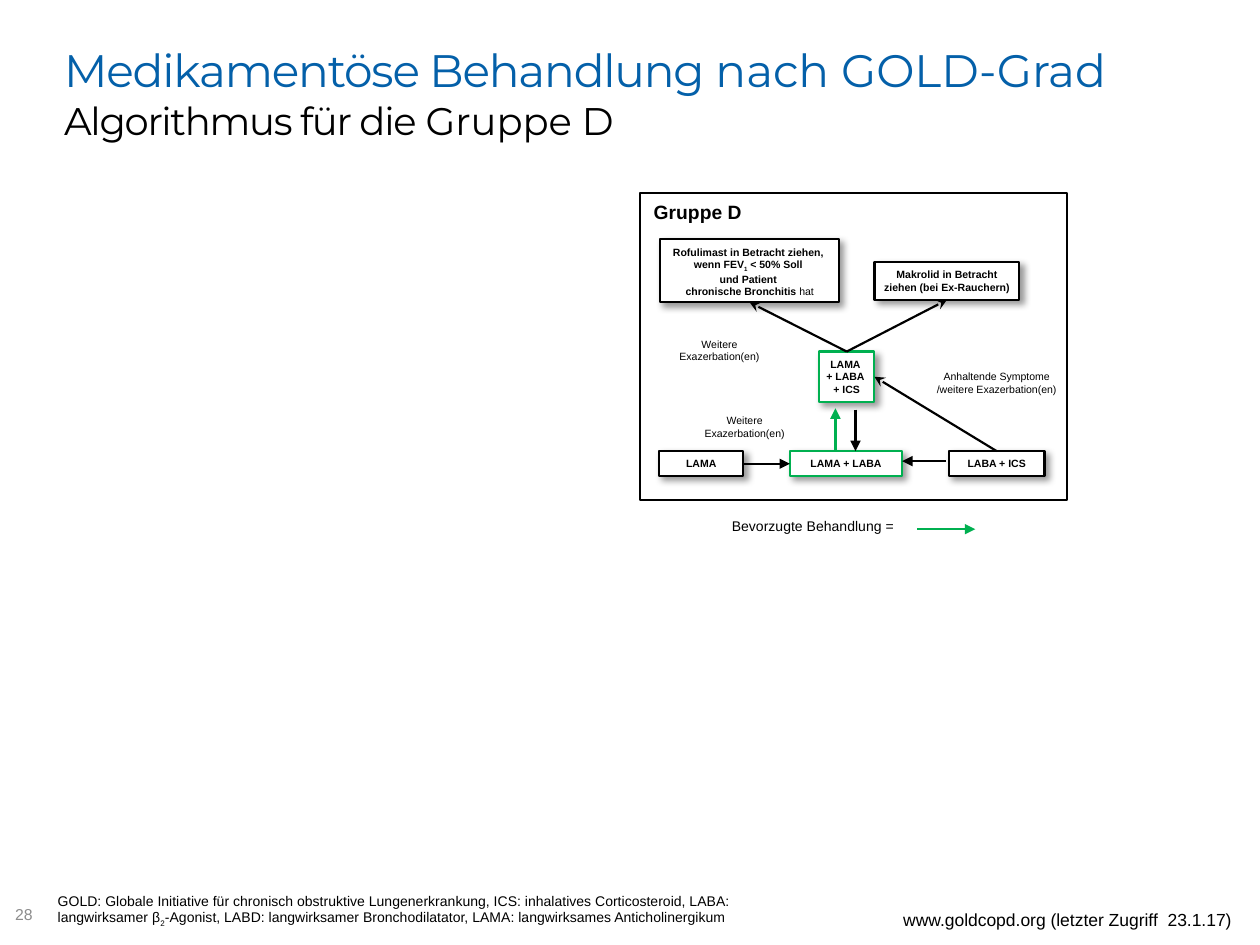
"""Build the slide on the GOLD group D treatment algorithm."""
import pptx
import pptx.dml.color
import pptx.enum.shapes
import pptx.enum.text
import pptx.oxml
import pptx.oxml.ns
import pptx.util

Pt = pptx.util.Pt
RGBColor = pptx.dml.color.RGBColor
ALIGN = pptx.enum.text.PP_ALIGN
ANCHOR = pptx.enum.text.MSO_ANCHOR
AUTO = pptx.enum.text.MSO_AUTO_SIZE
RECT = pptx.enum.shapes.MSO_SHAPE.RECTANGLE
STRAIGHT = pptx.enum.shapes.MSO_CONNECTOR.STRAIGHT

BLACK = RGBColor(0x00, 0x00, 0x00)
WHITE = RGBColor(0xFF, 0xFF, 0xFF)
GREEN = RGBColor(0x00, 0xB0, 0x50)
BLUE = RGBColor(0x04, 0x60, 0xA9)
GRAY = RGBColor(0x8C, 0x8C, 0x8C)
NS = pptx.oxml.ns.nsdecls("a")
SHADOW = (
    f'<a:outerShdw {NS} blurRad="50800" dist="38100" dir="2700000" algn="tl" rotWithShape="0">'
    '<a:srgbClr val="000000"><a:alpha val="40000"/></a:srgbClr></a:outerShdw>'
)


def write(s, pieces, size, align=ALIGN.LEFT, bold=False, color=BLACK, side=7.2):
    tf = s.text_frame
    tf.word_wrap = True
    tf.auto_size = AUTO.SHAPE_TO_FIT_TEXT
    tf.vertical_anchor = ANCHOR.TOP
    tf.margin_left = tf.margin_right = Pt(side)
    tf.margin_top = tf.margin_bottom = Pt(3.6)
    tf.text = pieces[0]
    for piece in pieces[1:]:
        if piece == "\v":
            tf.paragraphs[0].add_line_break()
        else:
            tf.paragraphs[0].add_run().text = piece
    for p in tf.paragraphs:
        p.alignment = align
        for r in p.runs:
            r.font.name = "Arial"
            r.font.size = Pt(size)
            r.font.bold = bold
            r.font.color.rgb = color
    return tf


def arrow(x1, y1, x2, y2, color=BLACK, width=1.25, head="triangle"):
    s = slide.shapes.add_connector(STRAIGHT, Pt(x1), Pt(y1), Pt(x2), Pt(y2))
    s.line.color.rgb = color
    s.line.width = Pt(width)
    s.line._get_or_add_ln().append(pptx.oxml.parse_xml(f'<a:tailEnd {NS} type="{head}"/>'))
    s._element.spPr.append(pptx.oxml.parse_xml(f"<a:effectLst {NS}/>"))
    return s


prs = pptx.Presentation()
prs.slide_width, prs.slide_height = Pt(720), Pt(540)
slide = prs.slides.add_slide(prs.slide_layouts[6])

frame = slide.shapes.add_shape(RECT, Pt(365.8), Pt(110.2), Pt(244.1), Pt(175.7))
frame.shadow.inherit = False
frame.fill.background()
frame.line.color.rgb = BLACK
frame.line.width = Pt(1.25)

texts = {}
for name, x, y, w, h, pieces, size, align, bold, color, side in [
    ("footnote", 25.9, 506.2, 427, 26.6, [
        "GOLD: Globale Initiative für chronisch obstruktive Lungenerkrankung, ICS: inhalatives "
        "Corticosteroid, LABA: langwirksamer β", "2",
        "-Agonist, LABD: langwirksamer Bronchodilatator, LAMA: langwirksames Anticholinergikum",
    ], 8, ALIGN.LEFT, False, BLACK, 7.2),
    ("group", 366.5, 110.9, 69.1, 20.9, ["Gruppe D"], 11, ALIGN.LEFT, True, BLACK, 7.2),
    ("lower", 388.1, 233.3, 74.9, 21.6, ["Weitere Exazerbation(en)"], 6, ALIGN.CENTER, False, BLACK, 7.2),
    ("upper", 377.3, 189.4, 67.7, 21.6, ["Weitere Exazerbation(en)"], 6, ALIGN.CENTER, False, BLACK, 7.2),
    ("lasting", 524.2, 208.1, 90.7, 21.6, ["Anhaltende Symptome\n/weitere Exazerbation(en)"],
     6, ALIGN.CENTER, False, BLACK, 7.2),
    ("legend", 411.1, 292.3, 158.4, 26.6, ["Bevorzugte Behandlung ="], 8, ALIGN.LEFT, False, BLACK, 7.2),
    ("number", 0, 508.3, 22.3, 28.8, ["28"], 9, ALIGN.LEFT, False, GRAY, 8.6),
    ("source", 499.7, 514.8, 211, 20.9, ["www.goldcopd.org (letzter Zugriff  23.1.17)"],
     10, ALIGN.RIGHT, False, BLACK, 7.2),
    ("title", 36.7, 15.1, 657.4, 75.6, [
        "Medikamentöse Behandlung ", "nach GOLD-Grad ", "\v", "Algorithmus für die ", "Gruppe D",
    ], 26, ALIGN.LEFT, False, BLUE, 0),
]:
    s = slide.shapes.add_textbox(Pt(x), Pt(y), Pt(w), Pt(h))
    texts[name] = write(s, pieces, size, align, bold, color, side)

texts["footnote"].paragraphs[0].runs[1]._r.get_or_add_rPr().set("baseline", "-25000")
texts["source"].paragraphs[0].line_spacing = 1.1
texts["number"].margin_right = Pt(3.6)
texts["number"].word_wrap = False
for name in ("number", "title"):
    texts[name].auto_size = AUTO.NONE
    texts[name].vertical_anchor = ANCHOR.MIDDLE
texts["title"].margin_top = texts["title"].margin_bottom = 0
title_runs = texts["title"].paragraphs[0].runs
for r in title_runs:
    r.font.name = "Montserrat"
for r in title_runs[::2]:
    r._r.get_or_add_rPr().set("spc", "-70")
for r in title_runs[2:]:
    r.font.size = Pt(22)
    r.font.color.rgb = BLACK

boxes = {}
for name, x, y, w, h, pieces, color, side in [
    ("lama", 376.6, 257.8, 48.2, 14.4, ["LAMA"], BLACK, 7.2),
    ("dual", 451.4, 257.8, 64.1, 14.4, ["LAMA + LABA"], GREEN, 7.2),
    ("laba_ics", 542.2, 257.8, 54.7, 14.4, ["LABA + ICS"], BLACK, 7.2),
    ("triple", 468, 200.9, 31.7, 28.8, ["LAMA \v+ LABA \v+ ICS"], GREEN, 2.9),
    ("rofulimast", 377.3, 136.8, 102.2, 36, [
        "Rofulimast in Betracht ziehen, \vwenn FEV", "1", " < 50% Soll ", "\v",
        "und Patient ", "\v", "chronische Bronchitis", " hat",
    ], BLACK, 5.8),
    ("makrolid", 499.7, 149.8, 82.8, 21.6, ["Makrolid in Betracht ziehen (bei Ex-Rauchern)"], BLACK, 2.9),
]:
    s = boxes[name] = slide.shapes.add_shape(RECT, Pt(x), Pt(y), Pt(w), Pt(h))
    s.shadow.inherit = False
    s._element.spPr.find(pptx.oxml.ns.qn("a:effectLst")).append(pptx.oxml.parse_xml(SHADOW))
    s.fill.solid()
    s.fill.fore_color.rgb = WHITE
    s.line.color.rgb = color
    s.line.width = Pt(1.25)
    write(s, pieces, 6, ALIGN.CENTER, True, side=side)

rofulimast_runs = boxes["rofulimast"].text_frame.paragraphs[0].runs
rofulimast_runs[2]._r.get_or_add_rPr().set("baseline", "-25000")
rofulimast_runs[-1].font.bold = False

for start, start_side, end, end_side, head in [
    ("lama", 3, "dual", 1, "triangle"),
    ("triple", 0, "makrolid", 2, "stealth"),
    ("triple", 0, "rofulimast", 2, "stealth"),
    ("laba_ics", 0, "triple", 3, "stealth"),
]:
    s = arrow(0, 0, 0, 0, head=head)
    s.begin_connect(boxes[start], start_side)
    s.end_connect(boxes[end], end_side)

arrow(540.7, 263.5, 515.5, 263.5, width=1.5)
arrow(477.4, 257, 477.4, 233.3, GREEN, 2)
arrow(488.9, 234, 488.9, 257.8, width=1.5)
arrow(524.2, 302.4, 557.3, 302.4, GREEN, 1.5)

prs.save("out.pptx")
